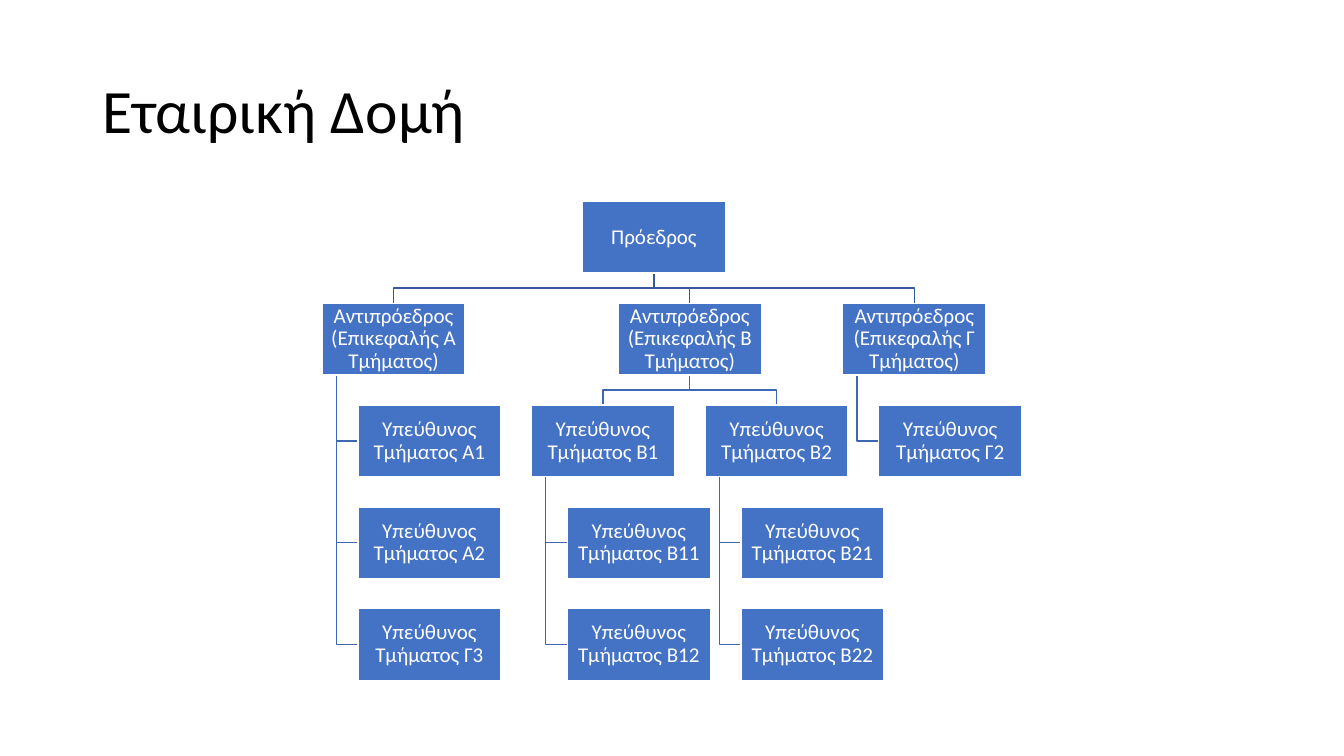
import pptx
import pptx.dml.color
import pptx.enum.shapes
import pptx.enum.text
import pptx.util

Pt = pptx.util.Pt
RGBColor = pptx.dml.color.RGBColor
ANCHOR = pptx.enum.text.MSO_ANCHOR
ALIGN = pptx.enum.text.PP_ALIGN

FONT = "Calibri"
BLACK = RGBColor(0x00, 0x00, 0x00)
WHITE = RGBColor(0xFF, 0xFF, 0xFF)
BOX_BLUE = RGBColor(0x44, 0x72, 0xC4)
TOP_LINE = RGBColor(0x36, 0x5B, 0x9D)
LOWER_LINE = RGBColor(0x3E, 0x67, 0xB2)

CHART_LEFT, CHART_TOP = 230, 144
BOX_W, BOX_H = 102.2, 51.1
COLUMN, INDENT, ROW = 124, 25.6, 72.7

PRESIDENT = "Πρόεδρος"
VP_A, VP_B, VP_C = [f"Αντιπρόεδρος (Επικεφαλής {d} Τμήματος)" for d in "ΑΒΓ"]
MANAGER = "Υπεύθυνος Τμήματος "

# label: (column, indent, row)
POSTS = {
    PRESIDENT: (1.5, 0, 0),
    VP_A: (0, 0, 1),
    MANAGER + "Α1": (0, 1, 2),
    MANAGER + "Α2": (0, 1, 3),
    MANAGER + "Γ3": (0, 1, 4),
    VP_B: (1.5, 1, 1),
    MANAGER + "Β1": (1, 1, 2),
    MANAGER + "Β11": (1, 2, 3),
    MANAGER + "Β12": (1, 2, 4),
    MANAGER + "Β2": (2, 1, 2),
    MANAGER + "Β21": (2, 2, 3),
    MANAGER + "Β22": (2, 2, 4),
    VP_C: (3, 0, 1),
    MANAGER + "Γ2": (3, 1, 2),
}
SPREAD = {
    PRESIDENT: [VP_A, VP_B, VP_C],
    VP_B: [MANAGER + "Β1", MANAGER + "Β2"],
}
HANGING = {
    VP_A: [MANAGER + n for n in ("Α1", "Α2", "Γ3")],
    MANAGER + "Β1": [MANAGER + n for n in ("Β11", "Β12")],
    MANAGER + "Β2": [MANAGER + n for n in ("Β21", "Β22")],
    VP_C: [MANAGER + "Γ2"],
}


def corner(post):
    """Return the left and top of a post's box in points."""
    column, indent, row = POSTS[post]
    return CHART_LEFT + column * COLUMN + indent * INDENT, CHART_TOP + row * ROW


def write(tf, text, size, color, align):
    """Fill a text frame with one formatted, vertically centred paragraph."""
    tf.text = text
    tf.word_wrap = True
    tf.vertical_anchor = ANCHOR.MIDDLE
    p = tf.paragraphs[0]
    p.alignment = align
    p.line_spacing = 0.9
    font = p.runs[0].font
    font.name, font.size = FONT, Pt(size)
    font.color.rgb = color


def add_title(s, text):
    """Add the slide title."""
    sp = s.shapes.add_textbox(Pt(66), Pt(28.8), Pt(828), Pt(104.4))
    write(sp.text_frame, text, 44, BLACK, ALIGN.LEFT)


def add_post(s, post):
    """Add the labelled box of one post."""
    left, top = corner(post)
    sp = s.shapes.add_shape(pptx.enum.shapes.MSO_SHAPE.RECTANGLE,
                            Pt(left), Pt(top), Pt(BOX_W), Pt(BOX_H))
    sp.shadow.inherit = False
    sp.fill.solid()
    sp.fill.fore_color.rgb = BOX_BLUE
    sp.line.color.rgb = WHITE
    sp.line.width = Pt(1)
    tf = sp.text_frame
    tf.margin_left = tf.margin_right = tf.margin_top = tf.margin_bottom = Pt(0.75)
    write(tf, post, 15, WHITE, ALIGN.CENTER)


def add_path(s, points, color):
    """Add an open bent line through the given points."""
    start, *rest = [(Pt(x), Pt(y)) for x, y in points]
    builder = s.shapes.build_freeform(*start, scale=1.0)
    builder.add_line_segments(rest, close=False)
    sp = builder.convert_to_shape()
    sp.shadow.inherit = False
    sp.fill.background()
    sp.line.color.rgb = color
    sp.line.width = Pt(1)


def link_spread(s, boss, post):
    """Link a boss to a post in the row below, from middle to middle."""
    x1, y1 = corner(boss)
    x2, y2 = corner(post)
    x1, x2, y1 = x1 + BOX_W / 2, x2 + BOX_W / 2, y1 + BOX_H
    bend = (y1 + y2) / 2
    color = TOP_LINE if boss == PRESIDENT else LOWER_LINE
    add_path(s, [(x1, y1), (x1, bend), (x2, bend), (x2, y2)], color)


def link_hanging(s, boss, post):
    """Link a boss to the left side of a post stacked below."""
    x1, y1 = corner(boss)
    x2, y2 = corner(post)
    x1, y2 = x1 + BOX_W / 10, y2 + BOX_H / 2
    add_path(s, [(x1, y1 + BOX_H), (x1, y2), (x2, y2)], LOWER_LINE)


def main():
    """Build the organisation chart slide."""
    prs = pptx.Presentation()
    prs.slide_width, prs.slide_height = Pt(960), Pt(540)
    s = prs.slides.add_slide(prs.slide_layouts[6])
    add_title(s, "Εταιρική Δομή")
    for links, link in ((SPREAD, link_spread), (HANGING, link_hanging)):
        for boss, posts in links.items():
            for post in posts:
                link(s, boss, post)
    for post in POSTS:
        add_post(s, post)
    prs.save("out.pptx")


if __name__ == "__main__":
    main()
